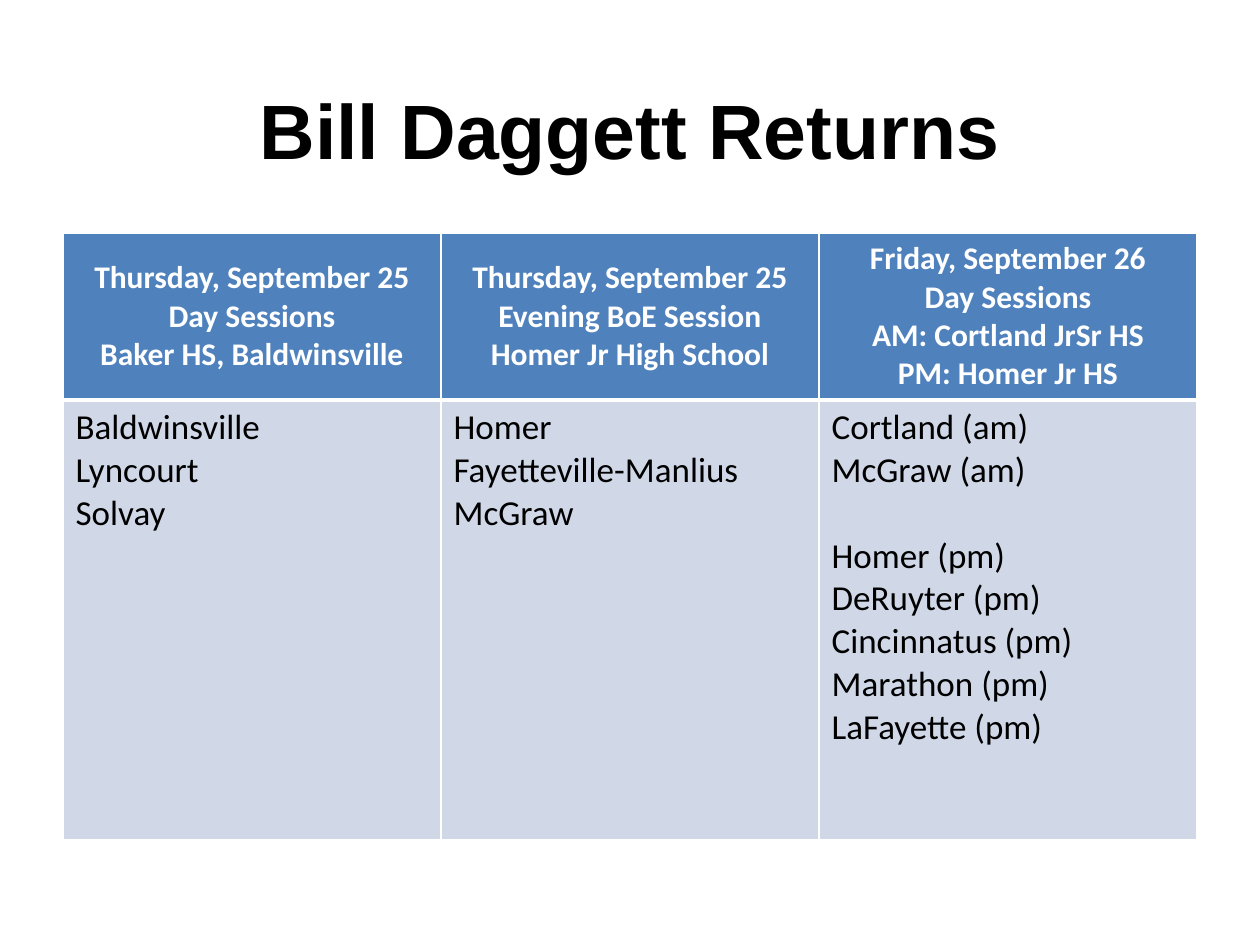
import pptx
import pptx.dml.color
import pptx.enum.text
import pptx.oxml
import pptx.oxml.ns
import pptx.util

PX_PER_INCH = 126
COLORS = {"ink": "000000", "paper": "FFFFFF", "header": "4F81BD", "body": "D0D8E8"}
ALIGN = pptx.enum.text.PP_ALIGN
ANCHOR = pptx.enum.text.MSO_ANCHOR
BODY_LINE = 24.4  # height in points of one line of 20 pt Calibri

# Each session: header paragraphs, then groups of schools set apart by a line.
SESSIONS = [
    (["Thursday, September 25\nDay Sessions", "Baker HS, Baldwinsville"],
     [["Baldwinsville", "Lyncourt", "Solvay"]]),
    (["Thursday, September 25\nEvening BoE Session", "Homer Jr High School"],
     [["Homer", "Fayetteville-Manlius", "McGraw"]]),
    (["Friday, September 26\nDay Sessions", "AM: Cortland JrSr HS", "PM: Homer Jr HS"],
     [["Cortland (am)", "McGraw (am)"],
      ["Homer (pm)", "DeRuyter (pm)", "Cincinnatus (pm)", "Marathon (pm)",
       "LaFayette (pm)"]]),
]


def px(length):
    return pptx.util.Emu(round(length * 914400 / PX_PER_INCH))


def rgb(name):
    return pptx.dml.color.RGBColor.from_string(COLORS[name])


class SlideBuilder:
    def __init__(self, deck):
        self.slide = deck.slides.add_slide(deck.slide_layouts[6])

    def add_text(self, frame, groups, font, size, color, bold=False, align=ALIGN.LEFT):
        """Add groups of paragraphs, with one line of space between groups."""
        para = None
        for group_index, group in enumerate(groups):
            for index, text in enumerate(group):
                para = frame.add_paragraph() if para else frame.paragraphs[0]
                para.alignment = align
                if group_index and not index:
                    para.space_before = pptx.util.Pt(BODY_LINE)
                for line_index, line in enumerate(text.split("\n")):
                    if line_index:
                        para.add_line_break()
                    span = para.add_run()
                    span.text = line
                    span.font.name = font
                    span.font.size = pptx.util.Pt(size)
                    span.font.bold = bold
                    span.font.color.rgb = rgb(color)

    def title(self, text, left, top, width, height):
        box = self.slide.shapes.add_textbox(px(left), px(top), px(width), px(height))
        frame = box.text_frame
        frame.word_wrap = True
        frame.vertical_anchor = ANCHOR.MIDDLE
        self.add_text(frame, [[text]], "Arial", 44, "ink", True, ALIGN.CENTER)

    def border(self, cell, widths):
        """Draw the cell's edges; widths are points for left, right, top, bottom."""
        properties = cell._tc.get_or_add_tcPr()
        for index, (side, width) in enumerate(zip("LRTB", widths)):
            edge = pptx.oxml.parse_xml(
                f'<a:ln{side} {pptx.oxml.ns.nsdecls("a")} w="{pptx.util.Pt(width)}">'
                f'<a:solidFill><a:srgbClr val="{COLORS["paper"]}"/></a:solidFill>'
                f'</a:ln{side}>')
            properties.insert(index, edge)

    def fill(self, cell, color):
        cell.fill.solid()
        cell.fill.fore_color.rgb = rgb(color)

    def session_table(self, sessions, left, top, column_width, row_heights):
        count = len(sessions)
        table = self.slide.shapes.add_table(
            2, count, px(left), px(top),
            px(column_width * count), px(sum(row_heights))).table
        for row, height in zip(table.rows, row_heights):
            row.height = px(height)
        for index, (heading, schools) in enumerate(sessions):
            table.columns[index].width = px(column_width)
            header, body = table.cell(0, index), table.cell(1, index)
            self.fill(header, "header")
            self.fill(body, "body")
            self.border(header, (1, 1, 1, 3))
            self.border(body, (1, 1, 3, 1))
            header.vertical_anchor = ANCHOR.MIDDLE
            self.add_text(header.text_frame, [heading], "Calibri", 18, "paper",
                          True, ALIGN.CENTER)
            self.add_text(body.text_frame, schools, "Calibri", 20, "ink")


def main():
    deck = pptx.Presentation()
    deck.slide_width, deck.slide_height = px(1260), px(945)
    builder = SlideBuilder(deck)
    builder.title("Bill Daggett Returns", 63, 50, 1134, 158)
    builder.session_table(SESSIONS, 63, 233, 378, (167, 440))
    deck.save("out.pptx")


if __name__ == "__main__":
    main()
